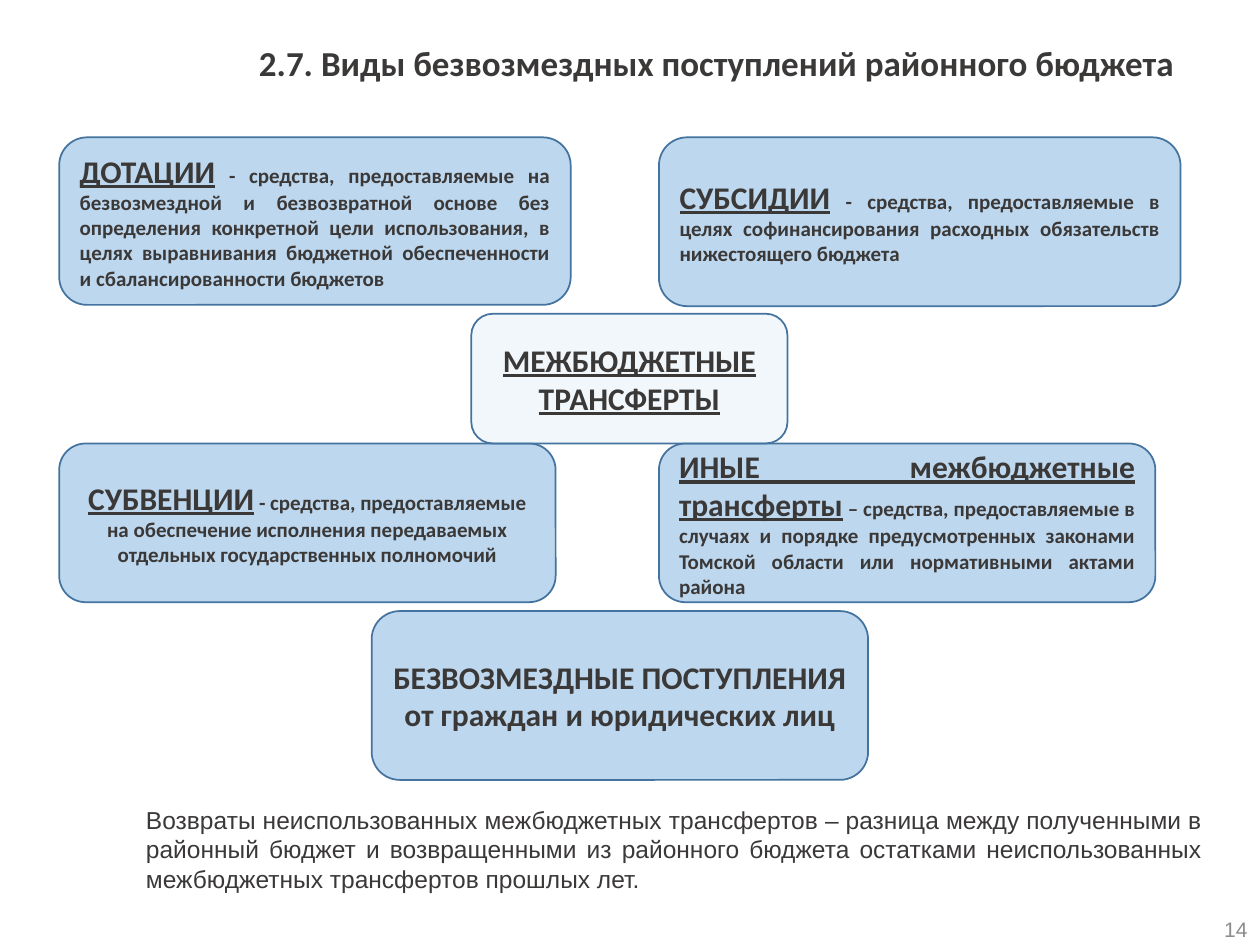
from lxml import etree
from pptx import Presentation
from pptx.dml.color import RGBColor
from pptx.enum.shapes import MSO_SHAPE
from pptx.enum.text import MSO_ANCHOR, PP_ALIGN
from pptx.oxml.ns import qn
from pptx.util import Inches, Pt

DARK = RGBColor(0x3B, 0x38, 0x38)
BLUE = RGBColor(0xBD, 0xD7, 0xEE)
PALE = RGBColor(0xDE, 0xEB, 0xF7)
EDGE = RGBColor(0x43, 0x73, 0x9E)
GRAY = RGBColor(0x8C, 0x8C, 0x8C)

LEFT, RIGHT = 0.47, 5.23
TOP_ROW, LOWER_ROW = 1.09, 3.52
CARD_W, LOWER_H = 3.94, 1.26


def write(frame, paragraphs, align=PP_ALIGN.CENTER, anchor=MSO_ANCHOR.MIDDLE,
          font="Calibri", color=DARK, bold=True, spacing=None):
    """Fill a frame; each paragraph is a list of (text, size, underline)."""
    frame.word_wrap = True
    frame.vertical_anchor = anchor
    for index, runs in enumerate(paragraphs):
        paragraph = frame.add_paragraph() if index else frame.paragraphs[0]
        paragraph.alignment = align
        if spacing:
            paragraph.line_spacing = spacing
        for text, size, underline in runs:
            run = paragraph.add_run()
            run.text = text
            run.font.name = font
            run.font.size = Pt(size)
            run.font.bold = bold
            run.font.underline = underline
            run.font.color.rgb = color


def add_label(slide, box, text, size, **style):
    label = slide.shapes.add_textbox(*map(Inches, box))
    write(label.text_frame, [[(text, size, False)]], **style)


def add_card(slide, box, paragraphs, fill=BLUE, opacity=None, **style):
    card = slide.shapes.add_shape(MSO_SHAPE.ROUNDED_RECTANGLE, *map(Inches, box))
    card.shadow.inherit = False
    card.fill.solid()
    card.fill.fore_color.rgb = fill
    if opacity:
        tint = card.fill._xPr.find(qn("a:solidFill"))[0]
        etree.SubElement(tint, qn("a:alpha"), val=str(opacity * 1000))
    card.line.color.rgb = EDGE
    card.line.width = Pt(1)
    write(card.text_frame, paragraphs, **style)


def add_definition(slide, box, term, meaning, **style):
    """Card with an underlined term; further lines of meaning are paragraphs."""
    first, *rest = meaning
    lines = [[(term, 18, True), (first, 12, False)]]
    lines += [[(line, 12, False)] for line in rest]
    add_card(slide, box, lines, **style)


def add_transfers(slide):
    # Four kinds of transfers around the central heading
    justified = {"align": PP_ALIGN.JUSTIFY}
    definitions = [
        ((RIGHT, LOWER_ROW, CARD_W, LOWER_H), "ИНЫЕ межбюджетные трансферты",
         [" – средства, предоставляемые в случаях и порядке предусмотренных "
          "законами Томской области или нормативными актами района"], justified),
        ((LEFT, TOP_ROW, 4.06, 1.33), "ДОТАЦИИ",
         [" - средства, предоставляемые на безвозмездной и безвозвратной основе "
          "без определения конкретной цели использования, в целях выравнивания "
          "бюджетной обеспеченности и сбалансированности бюджетов"], justified),
        ((RIGHT, TOP_ROW, 4.14, 1.34), "СУБСИДИИ",
         [" - средства, предоставляемые в целях софинансирования расходных "
          "обязательств нижестоящего бюджета"], justified),
        ((LEFT, LOWER_ROW, CARD_W, LOWER_H), "СУБВЕНЦИИ",
         [" - средства, предоставляемые",
          "на обеспечение исполнения передаваемых",
          "отдельных государственных полномочий"], {}),
    ]
    for box, term, meaning, style in definitions:
        add_definition(slide, box, term, meaning, **style)

    # Receipts from citizens and companies
    add_card(slide, (2.95, 4.85, CARD_W, 1.34),
             [[("БЕЗВОЗМЕЗДНЫЕ ПОСТУПЛЕНИЯ", 18, False)],
              [("от граждан и юридических лиц", 18, False)]])

    # Central heading
    add_card(slide, (3.74, 2.49, 2.51, 1.03),
             [[("МЕЖБЮДЖЕТНЫЕ", 18, True)], [("ТРАНСФЕРТЫ", 18, True)]],
             fill=PALE, opacity=40)


def main():
    deck = Presentation()
    deck.slide_width, deck.slide_height = Inches(10), Inches(7.5)
    slide = deck.slides.add_slide(deck.slide_layouts[6])

    # Title
    add_label(slide, (0.42, 0.32, 9, 0.45),
              "2.7. Виды безвозмездных поступлений районного бюджета", 20,
              align=PP_ALIGN.RIGHT, anchor=MSO_ANCHOR.TOP, spacing=0.9)

    add_transfers(slide)

    # Note on returned transfers
    add_label(slide, (1.06, 6.34, 8.58, 0.81),
              "Возвраты неиспользованных межбюджетных трансфертов – разница между "
              "полученными в районный бюджет и возвращенными из районного бюджета "
              "остатками неиспользованных межбюджетных трансфертов прошлых лет.", 14,
              align=PP_ALIGN.JUSTIFY, anchor=MSO_ANCHOR.TOP, font="Arial", bold=False)

    # Page number
    add_label(slide, (7.67, 7.11, 2.33, 0.52), "14", 12, align=PP_ALIGN.RIGHT,
              font="Arial", color=GRAY, bold=False)

    deck.save("out.pptx")


if __name__ == "__main__":
    main()
